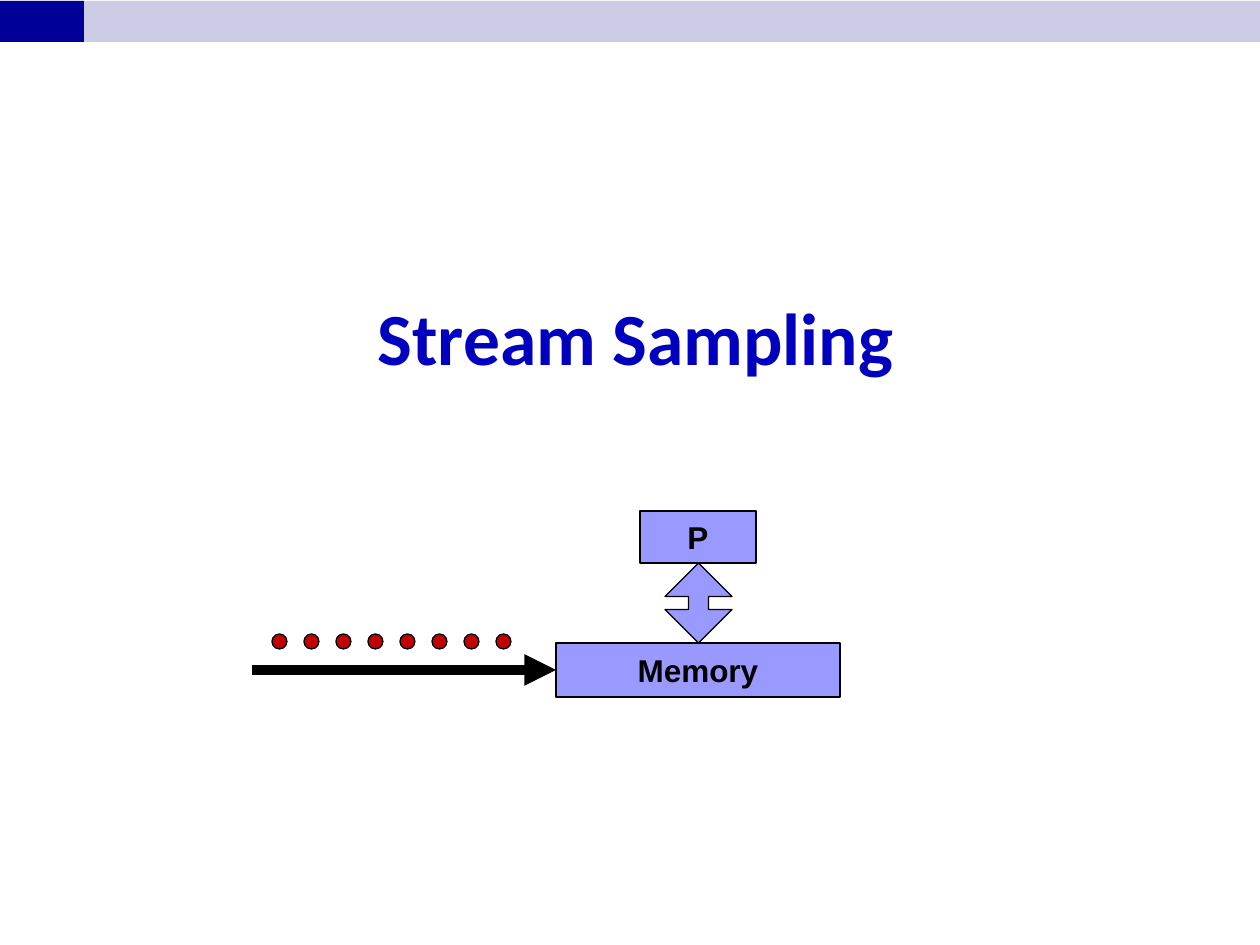
"""Build the Stream Sampling title slide with its processor and memory diagram."""
import dataclasses

import lxml.etree
import pptx
import pptx.dml.color
import pptx.enum.shapes
import pptx.enum.text
import pptx.oxml.ns
import pptx.util


@dataclasses.dataclass(frozen=True)
class Theme:
    band: str = "CCCCE6"
    corner: str = "000099"
    title: str = "0000BE"
    box: str = "9999FF"
    dot: str = "C00000"
    ink: str = "000000"
    title_font: str = "Calibri"
    label_font: str = "Arial"
    title_size: int = 42
    label_size: int = 18
    outline: float = 0.75
    stream: int = 6


THEME = Theme()
EMU_PER_PX = 914400 / 126
KINDS = pptx.enum.shapes.MSO_SHAPE
rgb = pptx.dml.color.RGBColor.from_string


def place(*lengths):
    return [pptx.util.Emu(round(length * EMU_PER_PX)) for length in lengths]


def add_block(kind, box, fill, outlined=True):
    shape = slide.shapes.add_shape(kind, *place(*box))
    shape.shadow.inherit = False
    shape.fill.solid()
    shape.fill.fore_color.rgb = rgb(fill)
    if outlined:
        shape.line.color.rgb = rgb(THEME.ink)
        shape.line.width = pptx.util.Pt(THEME.outline)
    else:
        shape.line.fill.background()
    return shape


presentation = pptx.Presentation()
presentation.slide_width, presentation.slide_height = place(1260, 945)
slide = presentation.slides.add_slide(presentation.slide_layouts[0])
subtitle = slide.placeholders[1].element
subtitle.getparent().remove(subtitle)

add_block(KINDS.RECTANGLE, (0, 1, 1260, 41), THEME.band, outlined=False)
add_block(KINDS.RECTANGLE, (0, 1, 84, 41), THEME.corner, outlined=False)

title = slide.shapes.title
title.left, title.top, title.width, title.height = place(42, 105, 1187, 462)
title.text_frame.vertical_anchor = pptx.enum.text.MSO_ANCHOR.MIDDLE
paragraph = title.text_frame.paragraphs[0]
paragraph.alignment = pptx.enum.text.PP_ALIGN.CENTER
run = paragraph.add_run()
run.text = "Stream Sampling"
run.font.name = THEME.title_font
run.font.size = pptx.util.Pt(THEME.title_size)
run.font.bold = True
run.font.color.rgb = rgb(THEME.title)

for label, box in (("P", (640, 511, 116, 52)), ("Memory", (556, 643, 284, 54))):
    block = add_block(KINDS.RECTANGLE, box, THEME.box)
    block.text_frame.vertical_anchor = pptx.enum.text.MSO_ANCHOR.MIDDLE
    paragraph = block.text_frame.paragraphs[0]
    paragraph.alignment = pptx.enum.text.PP_ALIGN.CENTER
    run = paragraph.add_run()
    run.text = label
    run.font.name = THEME.label_font
    run.font.size = pptx.util.Pt(THEME.label_size)
    run.font.bold = True
    run.font.color.rgb = rgb(THEME.ink)
memory = block

exchange = add_block(KINDS.UP_DOWN_ARROW, (665, 563, 67, 80), THEME.box)
exchange.adjustments[0] = 0.28
exchange.adjustments[1] = 0.3

stream = slide.shapes.add_connector(
    pptx.enum.shapes.MSO_CONNECTOR.STRAIGHT, *place(252, 670, 556, 670)
)
stream.end_connect(memory, 1)
stream.line.color.rgb = rgb(THEME.ink)
stream.line.width = pptx.util.Pt(THEME.stream)
line = stream.line._get_or_add_ln()
lxml.etree.SubElement(line, pptx.oxml.ns.qn("a:tailEnd"), type="triangle")
properties = stream._element.spPr
lxml.etree.SubElement(properties, pptx.oxml.ns.qn("a:effectLst"))

for index in reversed(range(8)):
    add_block(KINDS.OVAL, (272 + 32 * index, 634, 15, 15), THEME.dot)

presentation.save("out.pptx")
